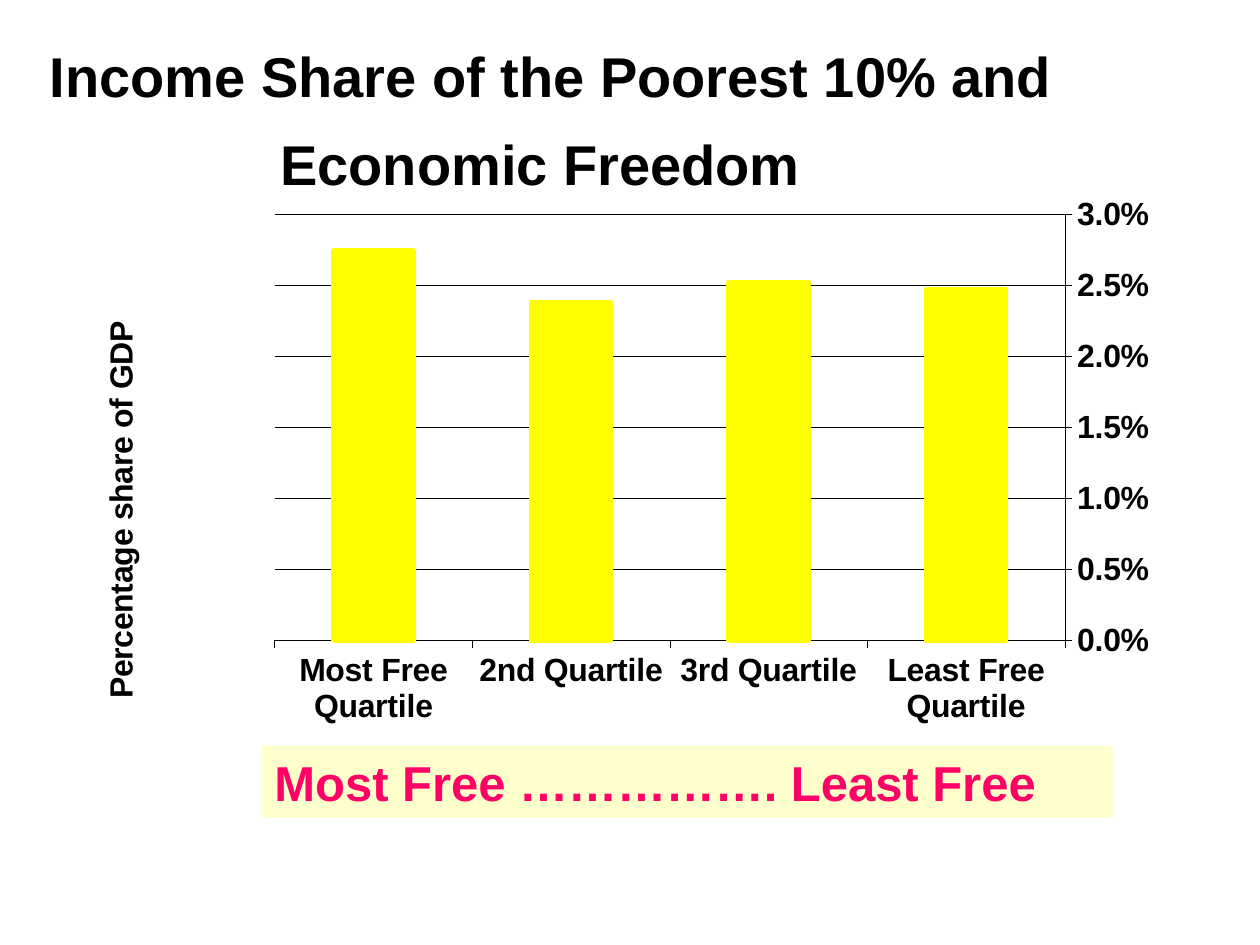
from lxml import etree
from pptx import Presentation
from pptx.chart.data import CategoryChartData
from pptx.dml.color import RGBColor
from pptx.enum.chart import XL_CHART_TYPE, XL_TICK_LABEL_POSITION, XL_TICK_MARK
from pptx.enum.shapes import MSO_SHAPE
from pptx.enum.text import MSO_ANCHOR, PP_ALIGN
from pptx.oxml import parse_xml
from pptx.oxml.ns import nsdecls, qn
from pptx.util import Inches, Pt

# Content
TITLE = "Income Share of the Poorest 10% and Economic Freedom"
BANNER = "Most Free ……………. Least Free"
AXIS = "Percentage share of GDP"
SHARES = [
    ("Least Free Quartile", 0.0247),
    ("3rd Quartile", 0.0252),
    ("2nd Quartile", 0.0238),
    ("Most Free Quartile", 0.0274),
]
COLORS = {"ink": "000000", "bar": "FFFF00", "band": "FFFFCC", "pink": "FF0066"}
FONT = "Arial"


def color(name):
    return RGBColor.from_string(COLORS[name])


def style(font, size, tint="ink", bold=True):
    font.name = FONT
    font.size = Pt(size)
    font.bold = bold
    font.color.rgb = color(tint)


def write(para, text, size=18.3, tint="ink", bold=True, align=None):
    run = para.add_run()
    run.text = text
    style(run.font, size, tint, bold)
    if align is not None:
        para.alignment = align


def place(shape, *box):
    shape.left, shape.top, shape.width, shape.height = map(Inches, box)


def rule(line, tint="ink", width=0.25):
    line.color.rgb = color(tint)
    line.width = Pt(width)


def layout(**parts):
    """Manual chart layout; the values are fractions of the chart."""
    root = parse_xml(f"<c:layout {nsdecls('c')}><c:manualLayout/></c:layout>")
    for tag, val in parts.items():
        etree.SubElement(root[0], qn(f"c:{tag}")).set("val", str(val))
    return root


def set_layout(parent, new, spot):
    for old in parent.findall(qn("c:layout")):
        parent.remove(old)
    parent.insert(spot, new)


deck = Presentation()
deck.slide_width, deck.slide_height = Inches(10), Inches(7.5)
slide = deck.slides.add_slide(deck.slide_layouts[5])

# Title; the taller closing space opens up the second line
title = slide.shapes.title
place(title, 0, 0, 8.75, 1.92)
frame = title.text_frame
frame.word_wrap = True
frame.vertical_anchor = MSO_ANCHOR.MIDDLE
write(frame.paragraphs[0], TITLE, size=32, align=PP_ALIGN.CENTER)
write(frame.paragraphs[0], " ", size=44, bold=False)

# Column chart
data = CategoryChartData(number_format="0.0%")
data.categories = [name for name, share in SHARES]
data.add_series("Series 1", [share for name, share in SHARES])
chart = slide.shapes.add_chart(
    XL_CHART_TYPE.COLUMN_CLUSTERED,
    *map(Inches, (0.31, 1.56, 8.81, 4.47)), data).chart
chart.has_legend = chart.has_title = False
style(chart.font, 18.3)
plot = chart.plots[0]
plot.gap_width = 150
plot.vary_by_categories = False
bars = plot.series[0].format
bars.fill.solid()
bars.fill.fore_color.rgb = color("bar")
rule(bars.line, "bar", 3.05)

# Axes; the reversed categories put the value axis on the right
cats, vals = chart.category_axis, chart.value_axis
for axis in (cats, vals):
    axis.major_tick_mark = XL_TICK_MARK.OUTSIDE
    axis.minor_tick_mark = XL_TICK_MARK.NONE
    style(axis.tick_labels.font, 18.3)
    rule(axis.format.line)
cats.reverse_order = True
cats.tick_label_position = XL_TICK_LABEL_POSITION.LOW
vals.minimum_scale, vals.maximum_scale, vals.major_unit = 0, 0.03, 0.005
vals.tick_labels.number_format = "0.0%"
vals.tick_labels.number_format_is_linked = False
vals.has_major_gridlines = True
rule(vals.major_gridlines.format.line)

# Value axis title, far left
frame = vals.axis_title.text_frame
write(frame.paragraphs[0], AXIS)
body = frame.paragraphs[0]._p.getparent().find(qn("a:bodyPr"))
body.set("rot", "-5400000")
body.set("vert", "horz")
set_layout(vals.axis_title._element,
           layout(xMode="edge", yMode="edge", x=0.05, y=0.21), 1)
set_layout(chart._chartSpace.chart.plotArea,
           layout(layoutTarget="inner", xMode="edge", yMode="edge",
                  x=0.213, y=0.03, w=0.714, h=0.758), 0)

# Banner
band = slide.shapes.add_shape(MSO_SHAPE.RECTANGLE, 0, 0, 0, 0)
place(band, 2.08, 5.92, 6.75, 0.57)
band.shadow.inherit = False
band.fill.solid()
band.fill.fore_color.rgb = color("band")
band.line.fill.background()
band.text_frame.word_wrap = True
band.text_frame.vertical_anchor = MSO_ANCHOR.MIDDLE
write(band.text_frame.paragraphs[0], BANNER, size=28, tint="pink",
      align=PP_ALIGN.LEFT)

deck.save("out.pptx")
